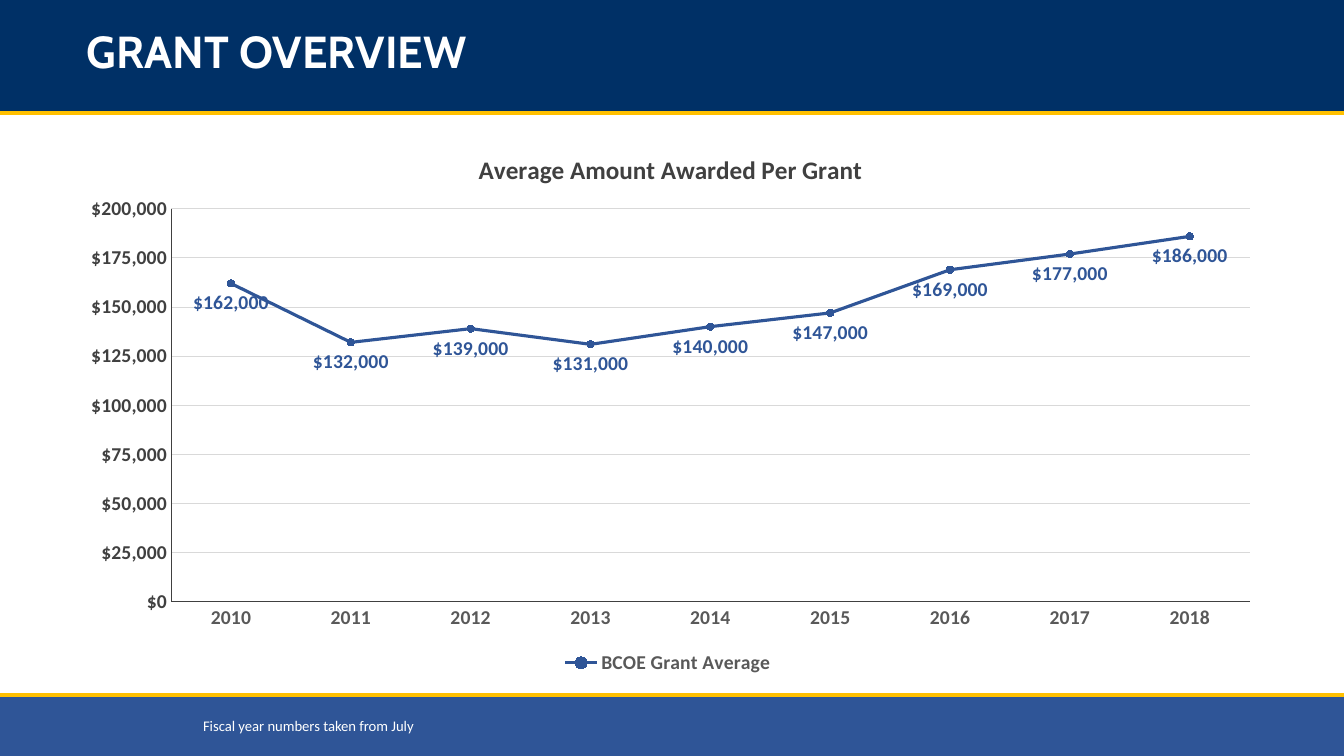
from lxml.etree import SubElement
from pptx import Presentation
from pptx.chart.data import CategoryChartData
from pptx.dml.color import RGBColor
from pptx.enum.chart import XL_CHART_TYPE as ChartType, XL_LABEL_POSITION as LabelPosition
from pptx.enum.chart import XL_LEGEND_POSITION as LegendPosition, XL_MARKER_STYLE as MarkerStyle
from pptx.enum.chart import XL_TICK_MARK as TickMark
from pptx.enum.shapes import MSO_CONNECTOR as Connector, MSO_SHAPE as Shape
from pptx.enum.text import MSO_ANCHOR as Anchor, PP_ALIGN as Align
from pptx.oxml import parse_xml
from pptx.oxml.ns import nsdecls, qn
from pptx.util import Emu, Pt

NAVY = RGBColor(0x00, 0x30, 0x66)
BLUE = RGBColor(0x2F, 0x55, 0x97)
GOLD = RGBColor(0xFF, 0xC0, 0x00)
WHITE = RGBColor(0xFF, 0xFF, 0xFF)
DARK = RGBColor(0x40, 0x40, 0x40)
GRAY = RGBColor(0x59, 0x59, 0x59)
PALE = RGBColor(0xD9, 0xD9, 0xD9)
BLACK = RGBColor(0x00, 0x00, 0x00)

WIDTH, HEIGHT = 1344, 756
MONEY = '"$"#,##0'
AVERAGES = {
    "2010": 162000, "2011": 132000, "2012": 139000,
    "2013": 131000, "2014": 140000, "2015": 147000,
    "2016": 169000, "2017": 177000, "2018": 186000,
}


def px(length):
    return Emu(round(length * 12192000 / WIDTH))


def set_font(font, size, color, bold=True, name="Calibri"):
    font.name, font.size, font.bold = name, Pt(size), bold
    font.color.rgb = color


def set_line(line, color, width):
    line.color.rgb = color
    line.width = Pt(width)


def set_layout(parent, index, **settings):
    for old in parent.findall(qn("c:layout")):
        parent.remove(old)
    layout = parse_xml(f"<c:layout {nsdecls('c')}><c:manualLayout/></c:layout>")
    for tag, value in settings.items():
        SubElement(layout[0], qn(f"c:{tag}")).set("val", str(value))
    parent.insert(index, layout)


class GrantSlide:
    """Draws the elements of the grant overview slide in one style."""

    def __init__(self, deck):
        self.page = deck.slides.add_slide(deck.slide_layouts[6])
        self.shapes = self.page.shapes

    def band(self, left, top, width, height, color):
        box = self.shapes.add_shape(Shape.RECTANGLE, *map(px, (left, top, width, height)))
        box.shadow.inherit = False
        box.fill.solid()
        box.fill.fore_color.rgb = color
        box.line.fill.background()

    def rule(self, top):
        rule = self.shapes.add_connector(Connector.STRAIGHT, *map(px, (-4, top, WIDTH + 3, top)))
        set_line(rule.line, GOLD, 3)
        SubElement(rule._element.spPr, qn("a:effectLst"))

    def text(self, left, top, width, height, words, size, name="Calibri",
             bold=False, align=Align.LEFT, anchor=Anchor.TOP, spacing=1.0):
        box = self.shapes.add_textbox(*map(px, (left, top, width, height)))
        frame = box.text_frame
        frame.word_wrap = True
        frame.vertical_anchor = anchor
        para = frame.paragraphs[0]
        para.text = words
        para.alignment = align
        para.line_spacing = spacing
        set_font(para.font, size, WHITE, bold, name)

    def axis(self, axis, color):
        axis.major_tick_mark = axis.minor_tick_mark = TickMark.NONE
        set_font(axis.tick_labels.font, 14, color)
        set_line(axis.format.line, DARK, 0.75)

    def line_chart(self, left, top, width, height, title, name, values):
        data = CategoryChartData(number_format=MONEY)
        data.categories = list(values)
        data.add_series(name, list(values.values()))
        frame = self.shapes.add_chart(
            ChartType.LINE_MARKERS, *map(px, (left, top, width, height)), data)
        chart = frame.chart
        set_font(chart.font, 10, BLACK, False)

        chart.has_title = True
        para = chart.chart_title.text_frame.paragraphs[0]
        para.text = title
        set_font(para.font, 18, DARK)
        set_layout(chart.chart_title._element, 1, xMode="edge", yMode="edge", x=0.34, y=0.04)
        plot_area = chart._chartSpace.find(".//" + qn("c:plotArea"))
        set_layout(plot_area, 0, layoutTarget="inner", xMode="edge", yMode="edge",
                   x=0.09, y=0.15, w=0.89, h=0.71)

        chart.has_legend = True
        chart.legend.position = LegendPosition.BOTTOM
        chart.legend.include_in_layout = False
        set_font(chart.legend.font, 14, GRAY)

        self.axis(chart.category_axis, GRAY)
        scale = chart.value_axis
        self.axis(scale, DARK)
        scale.minimum_scale, scale.maximum_scale, scale.major_unit = 0, 200000, 25000
        scale.tick_labels.number_format = MONEY
        scale.tick_labels.number_format_is_linked = False
        scale.has_major_gridlines = True
        set_line(scale.major_gridlines.format.line, PALE, 0.75)

        plot = chart.plots[0]
        plot.vary_by_categories = False
        series = plot.series[0]
        series.smooth = False
        set_line(series.format.line, BLUE, 2.25)
        marker = series.marker
        marker.style, marker.size = MarkerStyle.CIRCLE, 5
        marker.format.fill.solid()
        marker.format.fill.fore_color.rgb = BLUE
        set_line(marker.format.line, BLUE, 0.75)
        labels = series.data_labels
        labels.show_value = True
        labels.position = LabelPosition.BELOW
        labels.number_format = MONEY
        labels.number_format_is_linked = False
        set_font(labels.font, 14, BLUE)


def main():
    deck = Presentation()
    deck.slide_width, deck.slide_height = px(WIDTH), px(HEIGHT)
    slide = GrantSlide(deck)
    slide.rule(113)
    slide.band(-3, 696, 1350, 61, BLUE)
    slide.rule(695)
    slide.band(-3, -1, 1347, 112, NAVY)
    slide.line_chart(62, 126, 1212, 553, "Average Amount Awarded Per Grant",
                     "BCOE Grant Average", AVERAGES)
    slide.text(184, 712, 249, 29, "Fiscal year numbers taken from July", 10.5,
               align=Align.CENTER)
    slide.text(77, 18, 954, 71, "GRANT OVERVIEW", 32, name="Cabin", bold=True,
               anchor=Anchor.MIDDLE, spacing=0.9)
    deck.save("out.pptx")


if __name__ == "__main__":
    main()
